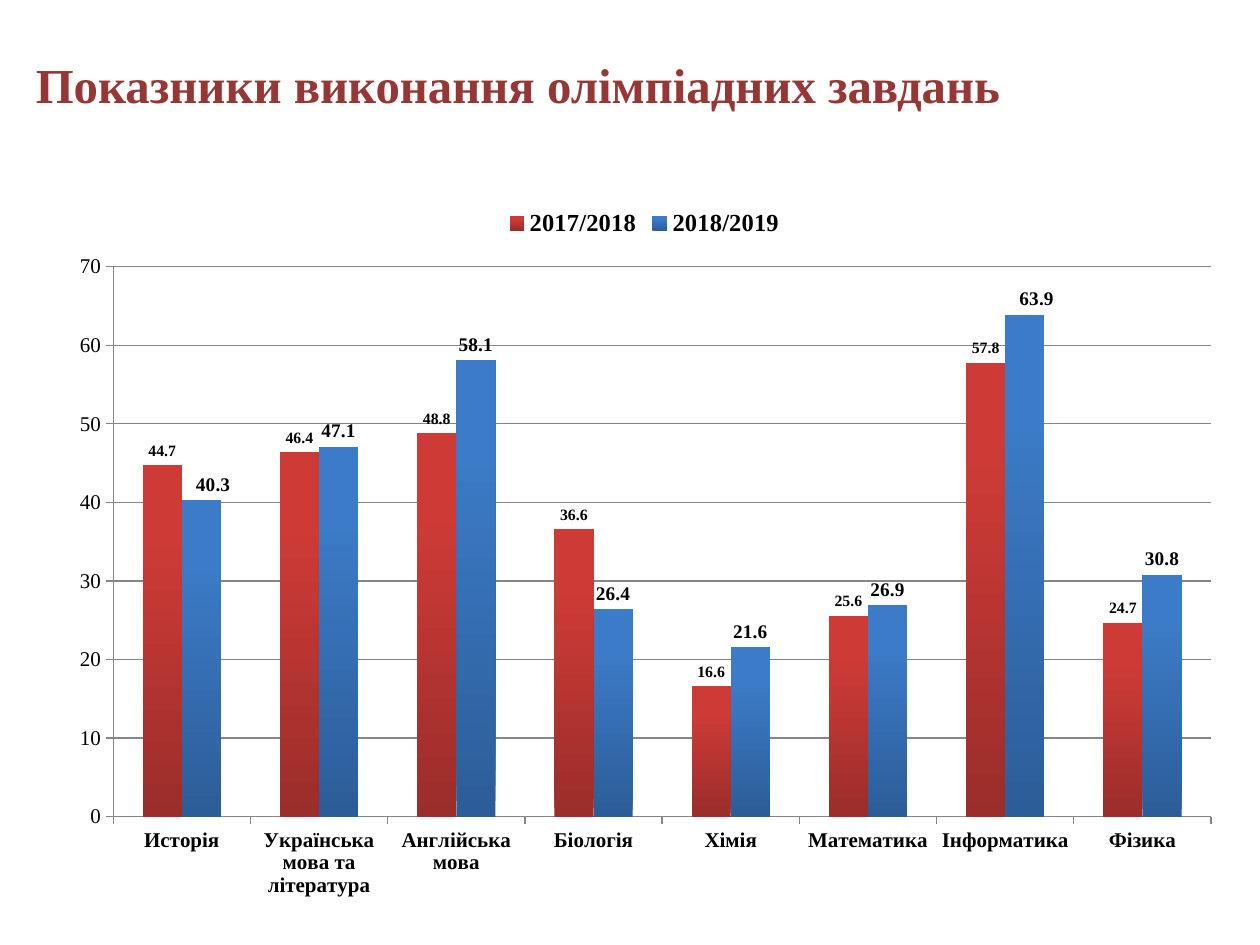
from lxml import etree
from pptx import Presentation
from pptx.chart.data import CategoryChartData
from pptx.dml.color import RGBColor
from pptx.enum.chart import XL_CHART_TYPE, XL_LABEL_POSITION, XL_LEGEND_POSITION, XL_TICK_MARK
from pptx.enum.text import MSO_ANCHOR, PP_ALIGN
from pptx.oxml import parse_xml
from pptx.oxml.ns import nsdecls, qn
from pptx.util import Inches, Pt

COLUMNS = XL_CHART_TYPE.COLUMN_CLUSTERED
OUTSIDE_END = XL_LABEL_POSITION.OUTSIDE_END
LEGEND_TOP = XL_LEGEND_POSITION.TOP
TICK_OUT = XL_TICK_MARK.OUTSIDE
MIDDLE = MSO_ANCHOR.MIDDLE
CENTER = PP_ALIGN.CENTER

SERIF = "Times New Roman"
GRID = "868686"
SUBJECTS = ["Исторія", "Українська мова та література", "Англійська мова", "Біологія",
            "Хімія", "Математика", "Інформатика", "Фізика"]
# name, values, bottom colour, top colour, label size, points with a shifted label
YEARS = [
    ("2017/2018", (44.7, 46.4, 48.8, 36.6, 16.6, 25.6, 57.8, 24.7), "9B2D2A", "CE3B37", 9, ()),
    ("2018/2019", (40.3, 47.1, 58.1, 26.4, 21.6, 26.9, 63.9, 30.8), "2C5D98", "3C7BC7", 11, (0, 6)),
]


def rgb(value):
    return RGBColor.from_string(value)


def set_font(font, size, name=SERIF, color="000000", bold=False):
    font.size, font.name, font.bold = Pt(size), name, bold
    font.color.rgb = rgb(color)


def layout_xml(**settings):
    """Return a manual chart layout; values are fractions of the chart."""
    layout = parse_xml(f"<c:layout {nsdecls('c')}><c:manualLayout/></c:layout>")
    for tag, value in settings.items():
        etree.SubElement(layout[0], qn(f"c:{tag}")).set("val", str(value))
    return layout


def add_title(s):
    title = s.shapes.title
    title.left, title.top = Inches(0), Inches(0.02)
    title.width, title.height = Inches(8.07), Inches(1.17)
    tf = title.text_frame
    tf.word_wrap = True
    tf.vertical_anchor = MIDDLE
    p = tf.paragraphs[0]
    p.alignment = CENTER
    for text, size, name, color in [
        (" ", 39.6, "Arial", "404040"),
        ("Показники виконання олімпіадних завдань", 27.9, SERIF, "953735"),
    ]:
        r = p.add_run()
        r.text = text
        set_font(r.font, size, name, color, True)


def style_axis(axis, bold):
    axis.major_tick_mark = TICK_OUT
    axis.format.line.color.rgb = rgb(GRID)
    set_font(axis.tick_labels.font, 12, bold=bold)


def style_series(series, bottom, top, label_size, shifted):
    fill = series.format.fill
    fill.gradient()
    fill.gradient_angle = 90
    for stop, color, position in zip(fill.gradient_stops, (bottom, top), (0, 0.8)):
        stop.color.rgb = rgb(color)
        stop.position = position
    labels = series.data_labels
    labels.show_value = True
    labels.position = OUTSIDE_END
    set_font(labels.font, label_size, bold=True)
    for index in shifted:
        label = series.points[index].data_label
        set_font(label.font, label_size, bold=True)
        label.position = OUTSIDE_END
    for element in labels._element.findall(qn("c:dLbl")):
        element.insert(1, layout_xml(x=0.01, y=0))


def add_results_chart(s):
    data = CategoryChartData()
    data.categories = SUBJECTS
    for name, values, *_ in YEARS:
        data.add_series(name, values)
    chart = s.shapes.add_chart(COLUMNS, Inches(0.43), Inches(1.55),
                               Inches(9.37), Inches(5.67), data).chart
    set_font(chart.font, 10, "Calibri")
    chart.has_title = False
    chart.has_legend = True
    chart.legend.position = LEGEND_TOP
    chart.legend.include_in_layout = False
    set_font(chart.legend.font, 14, bold=True)
    style_axis(chart.category_axis, True)
    axis = chart.value_axis
    style_axis(axis, False)
    axis.minimum_scale, axis.maximum_scale, axis.major_unit = 0, 70, 10
    axis.has_major_gridlines = True
    axis.major_gridlines.format.line.color.rgb = rgb(GRID)
    plot = chart.plots[0]
    plot.gap_width, plot.overlap, plot.vary_by_categories = 150, 0, False
    for series, (_, _, *style) in zip(plot.series, YEARS):
        style_series(series, *style)
    area = chart._chartSpace.chart.plotArea
    for old in area.findall(qn("c:layout")):
        area.remove(old)
    area.insert(0, layout_xml(layoutTarget="inner", xMode="edge", yMode="edge",
                              x=0.05, y=0.1, w=0.93, h=0.77))


def main():
    prs = Presentation()
    prs.slide_width, prs.slide_height = Inches(10), Inches(7.5)
    s = prs.slides.add_slide(prs.slide_layouts[5])
    add_title(s)
    add_results_chart(s)
    prs.save("out.pptx")


if __name__ == "__main__":
    main()
